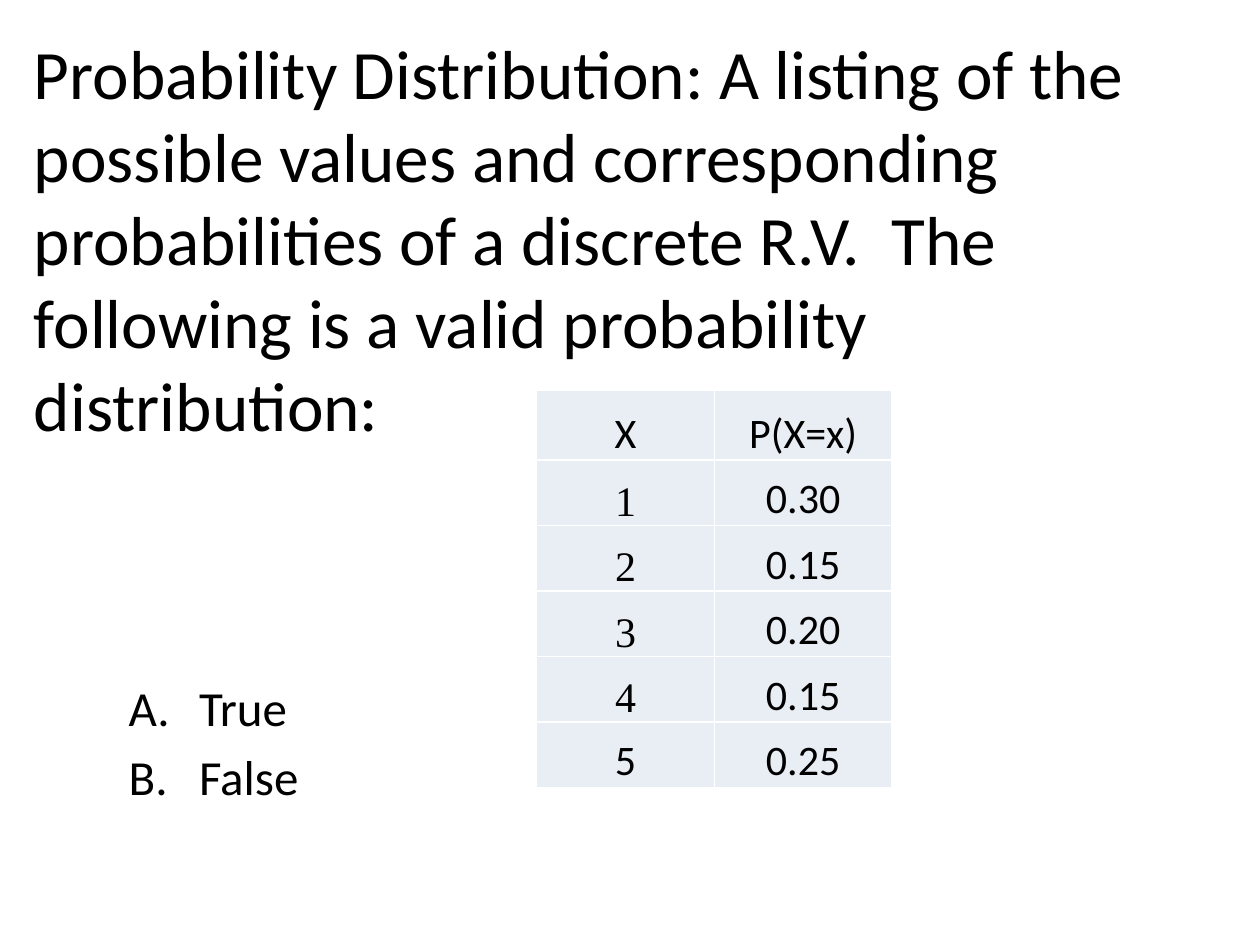
from pptx import Presentation
from pptx.dml.color import RGBColor
from pptx.enum.text import MSO_ANCHOR, MSO_AUTO_SIZE, PP_ALIGN
from pptx.oxml.ns import qn
from pptx.util import Cm, Pt
from lxml.etree import SubElement

BLACK = RGBColor(0x00, 0x00, 0x00)
WHITE = RGBColor(0xFF, 0xFF, 0xFF)
PALE_BLUE = RGBColor(0xE9, 0xED, 0xF4)
SANS, SERIF = "Calibri", "Times New Roman"

QUESTION = (
    "Probability Distribution: A listing of the possible values and "
    "corresponding probabilities of a discrete R.V.  The following is "
    "a valid probability distribution:"
)
ANSWERS = ["True", "False"]
DISTRIBUTION = [
    ("X", "P(X=x)"),
    ("1", "0.30"),
    ("2", "0.15"),
    ("3", "0.20"),
    ("4", "0.15"),
    ("5", "0.25"),
]
SERIF_VALUES = {"1", "2", "3", "4"}


def place(shape, left, top, width, height):
    shape.left, shape.top = Cm(left), Cm(top)
    shape.width, shape.height = Cm(width), Cm(height)


def add_run(paragraph, text, size, font=SANS):
    run = paragraph.add_run()
    run.text = text
    run.font.size = Pt(size)
    run.font.name = font
    run.font.color.rgb = BLACK


def fill_question(title, box):
    place(title, *box)
    frame = title.text_frame
    frame.auto_size = MSO_AUTO_SIZE.NONE
    frame.vertical_anchor = MSO_ANCHOR.MIDDLE
    paragraph = frame.paragraphs[0]
    paragraph.alignment = PP_ALIGN.LEFT
    add_run(paragraph, QUESTION, 39.6)
    # The closing line break lifts the text above the middle of its box
    paragraph.add_line_break()


def fill_answers(body, box):
    place(body, *box)
    frame = body.text_frame
    frame.auto_size = MSO_AUTO_SIZE.NONE
    for index, answer in enumerate(ANSWERS):
        paragraph = frame.add_paragraph() if index else frame.paragraphs[0]
        paragraph.level = 1
        paragraph.alignment = PP_ALIGN.LEFT
        paragraph.space_before = Pt(5.6)
        # Lettered list with a hanging indent
        properties = paragraph._p.get_or_add_pPr()
        properties.set("marL", str(Cm(2.69)))
        properties.set("indent", str(Cm(-1.42)))
        SubElement(properties, qn("a:buFont"), typeface="+mj-lt")
        SubElement(properties, qn("a:buAutoNum"), type="alphaUcPeriod")
        add_run(paragraph, answer, 28)


def add_borders(cell):
    properties = cell._tc.get_or_add_tcPr()
    for position, side in enumerate(("lnL", "lnR", "lnT", "lnB")):
        line = SubElement(properties, qn(f"a:{side}"), w=str(Pt(1)))
        fill = SubElement(line, qn("a:solidFill"))
        SubElement(fill, qn("a:srgbClr"), val=str(WHITE))
        properties.insert(position, line)


def add_distribution(slide, box):
    left, top, width, height = (Cm(length) for length in box)
    table = slide.shapes.add_table(
        len(DISTRIBUTION), len(DISTRIBUTION[0]), left, top, width, height
    ).table
    # The header row is slightly taller than the equal value rows
    value_height = Cm(1.32)
    for row in table.rows:
        row.height = value_height
    table.rows[0].height = height - value_height * (len(DISTRIBUTION) - 1)

    for row_index, values in enumerate(DISTRIBUTION):
        for column_index, value in enumerate(values):
            cell = table.cell(row_index, column_index)
            cell.fill.solid()
            cell.fill.fore_color.rgb = PALE_BLUE
            cell.vertical_anchor = MSO_ANCHOR.BOTTOM
            cell.margin_left = cell.margin_right = cell.margin_top = Cm(0.03)
            cell.margin_bottom = 0
            add_borders(cell)
            paragraph = cell.text_frame.paragraphs[0]
            paragraph.alignment = PP_ALIGN.CENTER
            add_run(paragraph, value, 24, SERIF if value in SERIF_VALUES else SANS)


def main():
    presentation = Presentation()
    presentation.slide_width, presentation.slide_height = Cm(25.4), Cm(19.05)
    slide = presentation.slides.add_slide(presentation.slide_layouts[0])
    title, body = slide.placeholders
    fill_question(title, (0.43, 1.7, 23.06, 8.05))
    fill_answers(body, (1.07, 13.54, 5.72, 4.45))
    add_distribution(slide, (10.82, 7.87, 7.16, 8))
    presentation.save("out.pptx")


if __name__ == "__main__":
    main()
